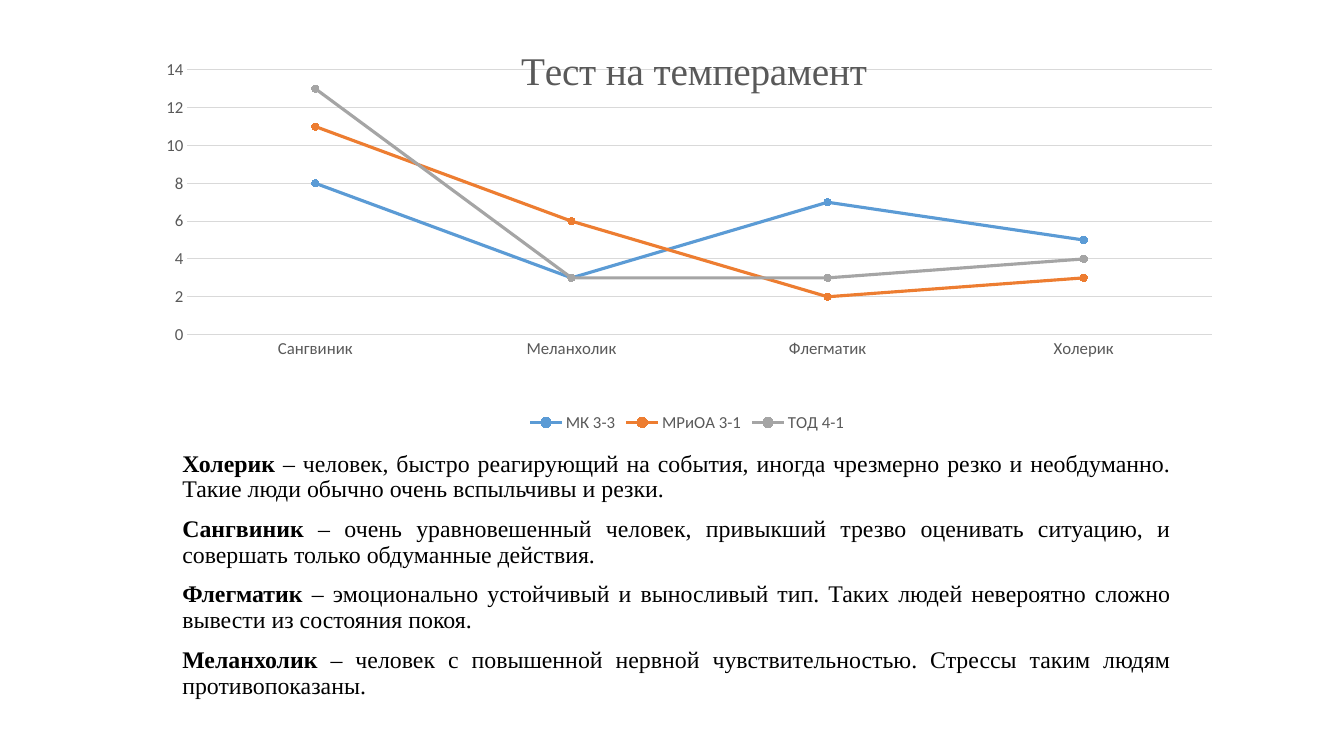
import pptx
import pptx.chart.data
import pptx.dml.color
import pptx.enum.chart
import pptx.enum.text
import pptx.oxml
import pptx.oxml.ns
import pptx.util
from pptx.util import Inches

RGBColor = pptx.dml.color.RGBColor
BLACK = RGBColor(0x00, 0x00, 0x00)
GRAY = RGBColor(0x59, 0x59, 0x59)
GRID = RGBColor(0xD9, 0xD9, 0xD9)
BLUE = RGBColor(0x5B, 0x9B, 0xD5)
ORANGE = RGBColor(0xED, 0x7D, 0x31)
SILVER = RGBColor(0xA5, 0xA5, 0xA5)

TYPES = ["Сангвиник", "Меланхолик", "Флегматик", "Холерик"]
GROUPS = [
    ("МК 3-3", (8, 3, 7, 5), BLUE),
    ("МРиОА 3-1", (11, 6, 2, 3), ORANGE),
    ("ТОД 4-1", (13, 3, 3, 4), SILVER),
]
DEFINITIONS = [
    ("Холерик", " – человек, быстро реагирующий на события, иногда чрезмерно резко "
     "и необдуманно. Такие люди обычно очень вспыльчивы и резки."),
    ("Сангвиник", " – очень уравновешенный человек, привыкший трезво оценивать "
     "ситуацию, и совершать только обдуманные действия."),
    ("Флегматик", " – эмоционально устойчивый и выносливый тип. Таких людей "
     "невероятно сложно вывести из состояния покоя."),
    ("Меланхолик", " – человек с повышенной нервной чувствительностью. Стрессы "
     "таким людям противопоказаны."),
]


def style_font(font, size, color, name):
    font.size = pptx.util.Pt(size)
    font.color.rgb = color
    font.name = name


def style_line(line, color, width):
    line.color.rgb = color
    line.width = pptx.util.Pt(width)


def set_layout(parent, index, **values):
    qn = pptx.oxml.ns.qn
    old = parent.find(qn("c:layout"))
    if old is not None:
        parent.remove(old)
    items = "".join(f'<c:{tag} val="{val}"/>' for tag, val in values.items())
    layout = pptx.oxml.parse_xml(
        f'<c:layout {pptx.oxml.ns.nsdecls("c")}>'
        f"<c:manualLayout>{items}</c:manualLayout></c:layout>")
    parent.insert(index, layout)


def style_axis(axis):
    axis.major_tick_mark = pptx.enum.chart.XL_TICK_MARK.NONE
    axis.minor_tick_mark = pptx.enum.chart.XL_TICK_MARK.NONE
    style_font(axis.tick_labels.font, 12, GRAY, "Calibri")


def style_series(series, color):
    series.smooth = False
    style_line(series.format.line, color, 2.25)
    marker = series.marker
    marker.style = pptx.enum.chart.XL_MARKER_STYLE.CIRCLE
    marker.size = 5
    marker.format.fill.solid()
    marker.format.fill.fore_color.rgb = color
    style_line(marker.format.line, color, 0.75)


def add_title(chart, text):
    chart.has_title = True
    title = chart.chart_title
    p = title.text_frame.paragraphs[0]
    p.add_run().text = text
    style_font(p.font, 28, GRAY, "Times New Roman")
    p.font.bold = False
    set_layout(title._element, 1, xMode="edge", yMode="edge", x=0.34, y=0.06)


def add_line_chart(s):
    data = pptx.chart.data.CategoryChartData()
    data.categories = TYPES
    for name, values, _ in GROUPS:
        data.add_series(name, values)
    chart = s.shapes.add_chart(
        pptx.enum.chart.XL_CHART_TYPE.LINE_MARKERS,
        Inches(1.45), Inches(0.14), Inches(10.73), Inches(4.19), data).chart
    style_font(chart.font, 10, BLACK, "Calibri")
    add_title(chart, "Тест на темперамент")

    style_axis(chart.category_axis)
    style_line(chart.category_axis.format.line, GRID, 0.75)
    value_axis = chart.value_axis
    style_axis(value_axis)
    value_axis.minimum_scale = 0
    value_axis.maximum_scale = 14
    value_axis.major_unit = 2
    value_axis.format.line.fill.background()
    style_line(value_axis.major_gridlines.format.line, GRID, 0.75)

    chart.has_legend = True
    chart.legend.position = pptx.enum.chart.XL_LEGEND_POSITION.BOTTOM
    chart.legend.include_in_layout = False
    style_font(chart.legend.font, 12, GRAY, "Calibri")

    plot = chart.plots[0]
    plot.vary_by_categories = False
    for series, (_, _, color) in zip(plot.series, GROUPS):
        style_series(series, color)
    set_layout(chart._chartSpace.chart.plotArea, 0, layoutTarget="inner",
               xMode="edge", yMode="edge", x=0.038, y=0.132, w=0.947, h=0.627)


def add_definitions(s):
    sp = s.shapes.add_textbox(Inches(1.71), Inches(4.43), Inches(10), Inches(2.92))
    tf = sp.text_frame
    tf.word_wrap = True
    for i, (term, meaning) in enumerate(DEFINITIONS):
        p = tf.add_paragraph() if i else tf.paragraphs[0]
        p.alignment = pptx.enum.text.PP_ALIGN.JUSTIFY
        p.line_spacing = 0.9
        p.space_before = pptx.util.Pt(10)
        style_font(p.font, 17, BLACK, "Times New Roman")
        r = p.add_run()
        r.text = term
        r.font.bold = True
        p.add_run().text = meaning


def main():
    prs = pptx.Presentation()
    prs.slide_width = Inches(13.33)
    prs.slide_height = Inches(7.5)
    s = prs.slides.add_slide(prs.slide_layouts[6])
    add_definitions(s)
    add_line_chart(s)
    prs.save("out.pptx")


if __name__ == "__main__":
    main()
